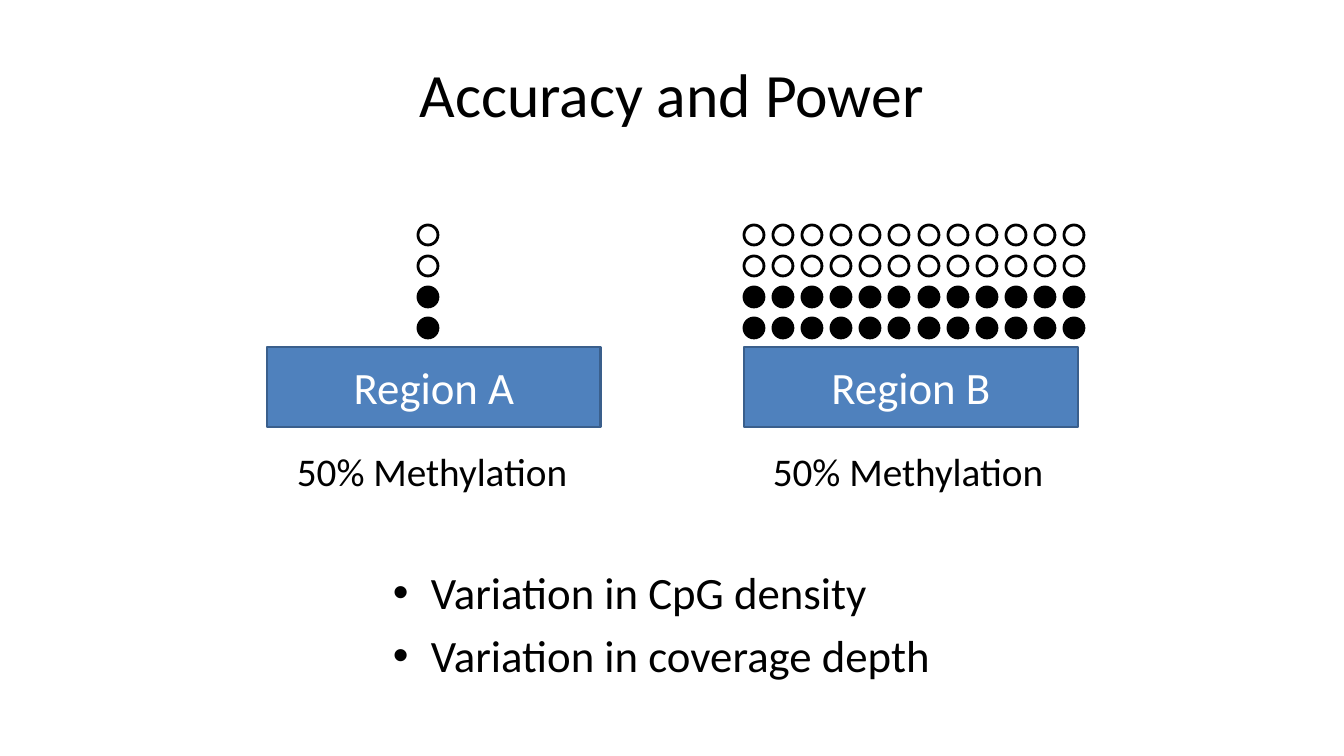
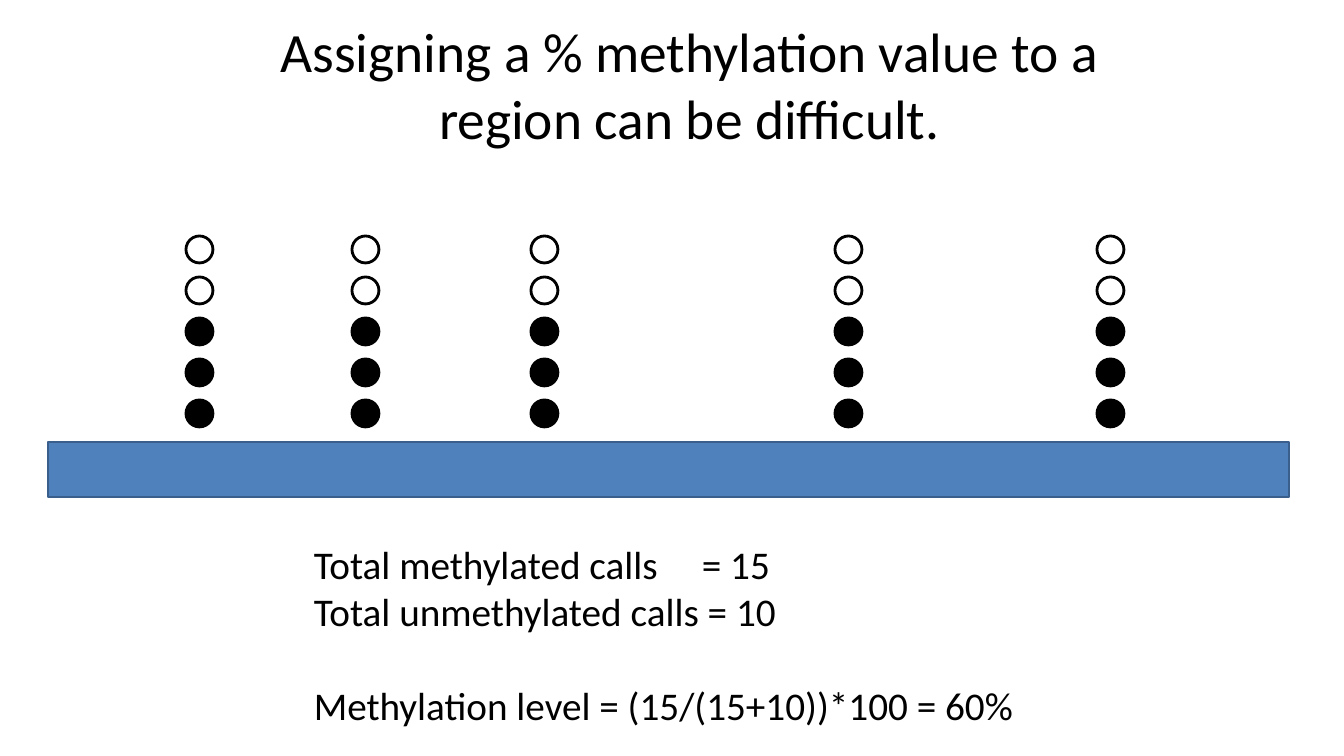
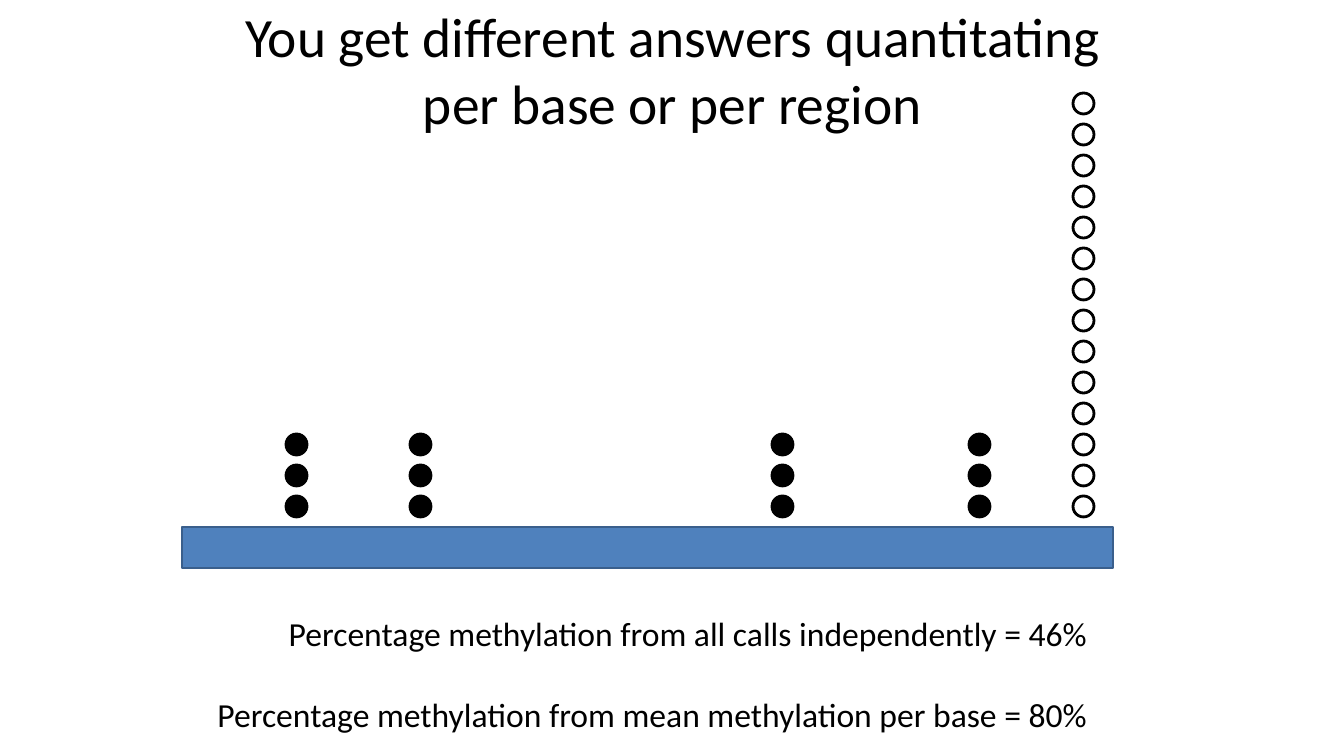
"""Three slides on measuring methylation per base and per region."""
from lxml.etree import SubElement
from pptx import Presentation
from pptx.dml.color import RGBColor
from pptx.enum.shapes import MSO_SHAPE
from pptx.enum.text import MSO_ANCHOR, MSO_AUTO_SIZE, PP_ALIGN
from pptx.oxml.ns import qn
from pptx.util import Pt

SCALE = 914400 / 100.8
COLORS = {"black": "000000", "white": "FFFFFF", "blue": "4F81BD", "edge": "3A5F8C"}
FRAME = {"word_wrap": True, "auto_size": MSO_AUTO_SIZE.NONE}
FILLED, OPEN = "black", "white"
MIXED = [FILLED] * 3 + [OPEN] * 2
HALF = [FILLED] * 2 + [OPEN] * 2

SLIDES = [
    {
        "title": ("Accuracy and Power", 44, (67, 30, 1210, 126)),
        "circle": (20, 318, 31),
        "bars": [
            ("Region A", (267, 347, 334, 80), [(418, HALF)]),
            ("Region B", (744, 347, 334, 80),
             [(744 + round(column * 320 / 11), HALF) for column in range(12)]),
        ],
        "texts": [
            ((287, 442, 294, 57), ["50% Methylation"], 28, {}),
            ((763, 442, 294, 57), ["50% Methylation"], 28, {}),
            ((383, 560, 651, 166), ["Variation in CpG density", "Variation in coverage depth"],
             32, {"bullet": 38, "gaps": {1: 6.4}}),
        ],
    },
    {
        "title": ("Assigning a % methylation value to a region can be difficult.",
                  39.6, (236, 21, 907, 126)),
        "circle": (27, 400, 41),
        "bars": [("", (48, 442, 1241, 55),
                  [(left, MIXED) for left in (186, 352, 531, 835, 1097)])],
        "texts": [
            ((304, 535, 729, 201),
             ["Total methylated calls\t= 15", "Total unmethylated calls = 10",
              "Methylation level = (15/(15+10))*100 = 60%"],
             28, {"tab": 388, "gaps": {2: 34}}),
        ],
    },
    {
        "title": ("You get different answers quantitating per base or per region",
                  39.6, (219, 6, 907, 126)),
        "circle": (21, 496, 31),
        "bars": [("", (182, 527, 931, 41),
                  [(left, [FILLED] * 3) for left in (286, 410, 772, 969)]
                  + [(1073, [OPEN] * 14)])],
        "texts": [
            ((199, 608, 898, 132),
             ["Percentage methylation from all calls independently = 46%",
              "Percentage methylation from mean methylation per base = 80%"],
             24, {"alignment": PP_ALIGN.RIGHT, "gaps": {1: 29}}),
        ],
    },
]


def add_block(shapes, preset, box, fill, line):
    shape = shapes.add_shape(preset, *[round(length * SCALE) for length in box])
    shape.shadow.inherit = False
    shape.fill.solid()
    shape.fill.fore_color.rgb = RGBColor.from_string(COLORS[fill])
    shape.line.color.rgb = RGBColor.from_string(COLORS[line])
    shape.line.width = Pt(2)
    return shape


def write_text(frame, lines, size, color="black", alignment=PP_ALIGN.LEFT,
               bullet=0, tab=0, gaps={}):
    for name, value in FRAME.items():
        setattr(frame, name, value)
    for index, line in enumerate(lines):
        paragraph = frame.add_paragraph() if index else frame.paragraphs[0]
        properties = paragraph._p.get_or_add_pPr()
        if bullet:
            properties.set("marL", str(round(bullet * SCALE)))
            properties.set("indent", str(round(-bullet * SCALE)))
            SubElement(properties, qn("a:buFont"), typeface="Arial")
            SubElement(properties, qn("a:buChar"), char="•")
        if tab and "\t" in line:
            tabs = SubElement(properties, qn("a:tabLst"))
            SubElement(tabs, qn("a:tab"), pos=str(round(tab * SCALE)), algn="l")
        paragraph.alignment = alignment
        paragraph.space_before = Pt(gaps.get(index, 0))
        run = paragraph.add_run()
        run.text = line
        for name, value in {"name": "Calibri", "size": Pt(size)}.items():
            setattr(run.font, name, value)
        run.font.color.rgb = RGBColor.from_string(COLORS[color])


presentation = Presentation()
presentation.slide_width = round(1344 * SCALE)
presentation.slide_height = round(756 * SCALE)

for content in SLIDES:
    slide = presentation.slides.add_slide(presentation.slide_layouts[5])
    heading, heading_size, heading_box = content["title"]
    title = slide.shapes.title
    for name, length in zip(("left", "top", "width", "height"), heading_box):
        setattr(title, name, round(length * SCALE))
    title.text_frame.vertical_anchor = MSO_ANCHOR.MIDDLE
    write_text(title.text_frame, [heading], heading_size, alignment=PP_ALIGN.CENTER)

    diameter, lowest, pitch = content["circle"]
    for label, bar_box, stacks in content["bars"]:
        group = slide.shapes.add_group_shape()
        bar = add_block(group.shapes, MSO_SHAPE.RECTANGLE, bar_box, "blue", "edge")
        if label:
            bar.text_frame.vertical_anchor = MSO_ANCHOR.MIDDLE
            write_text(bar.text_frame, [label], 32, "white", PP_ALIGN.CENTER)
        for left, calls in stacks:
            for level, fill in enumerate(calls):
                circle_box = (left, lowest - level * pitch, diameter, diameter)
                add_block(group.shapes, MSO_SHAPE.OVAL, circle_box, fill, "black")

    for text_box, lines, size, options in content["texts"]:
        shape = slide.shapes.add_textbox(*[round(length * SCALE) for length in text_box])
        write_text(shape.text_frame, lines, size, **options)

presentation.save("out.pptx")
